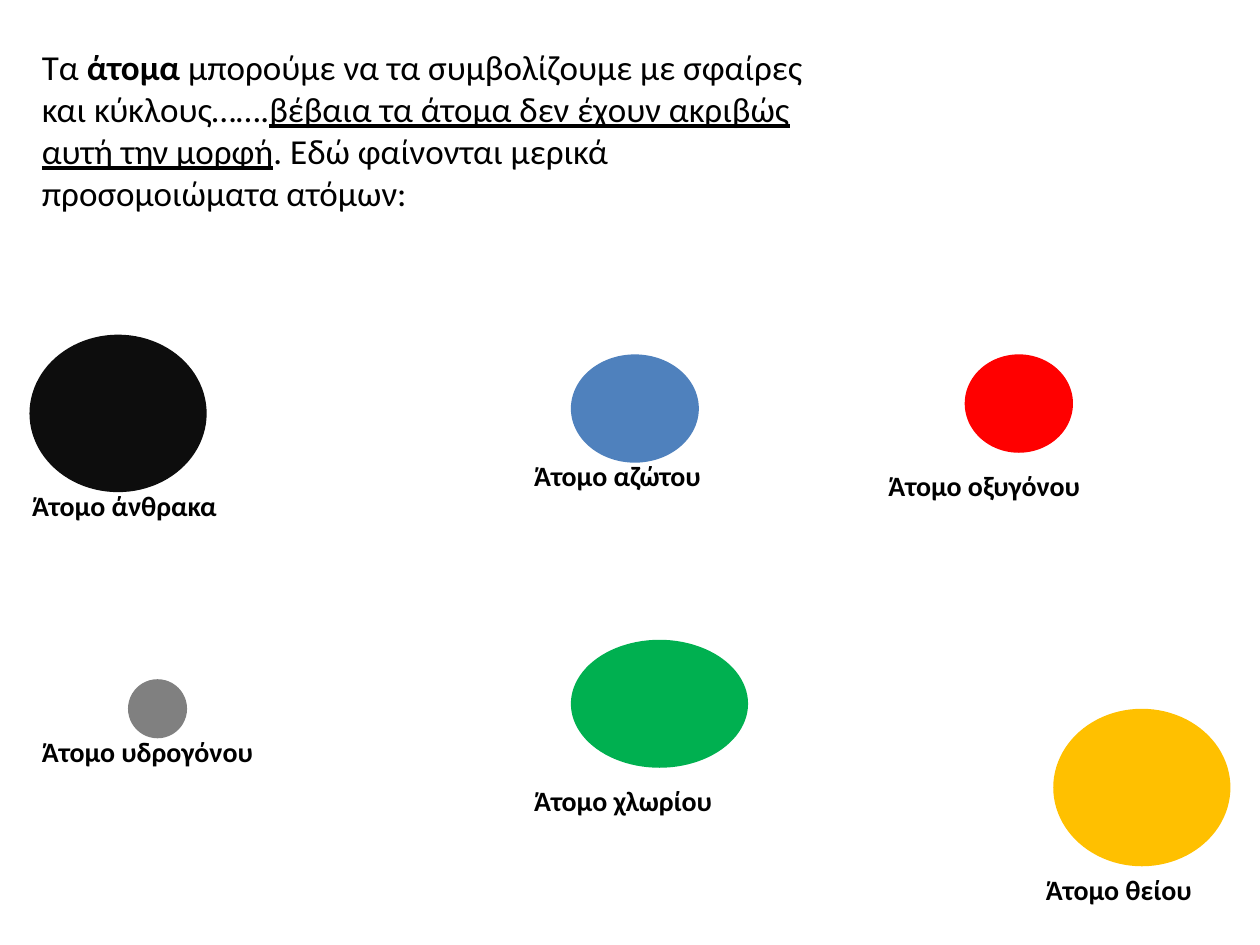
"""Build a slide of coloured spheres that stand for six kinds of atom."""
from typing import NamedTuple

from pptx import Presentation
from pptx.dml.color import RGBColor
from pptx.enum.shapes import MSO_SHAPE as Preset
from pptx.slide import Slide
from pptx.text.text import _Paragraph as Paragraph
from pptx.util import Inches, Pt

WIDTH, HEIGHT = Inches(10), Inches(7.5)
CELL = WIDTH / 128
LABEL_COLUMNS, LABEL_ROWS = 29, 4.75

BLACK = RGBColor(0x00, 0x00, 0x00)
CARBON = RGBColor(0x0D, 0x0D, 0x0D)
HYDROGEN = RGBColor(0x80, 0x80, 0x80)
NITROGEN = RGBColor(0x4F, 0x81, 0xBD)
OXYGEN = RGBColor(0xFF, 0x00, 0x00)
CHLORINE = RGBColor(0x00, 0xB0, 0x50)
SULFUR = RGBColor(0xFF, 0xC0, 0x00)


class Area(NamedTuple):
    """A rectangle in grid columns and rows."""
    column: float
    row: float
    columns: float
    rows: float

    def lengths(self) -> list[int]:
        """Return left, top, width and height as slide lengths."""
        return [round(cells * CELL) for cells in self]


class Span(NamedTuple):
    """A stretch of text in one style."""
    text: str
    bold: bool = False
    underline: bool = False


class Atom(NamedTuple):
    """A sphere and the top left cell of its label."""
    name: str
    color: RGBColor
    sphere: Area
    label_column: float
    label_row: float


INTRO = [
    Span("Τα "),
    Span("άτομα", bold=True),
    Span(" μπορούμε να τα συμβολίζουμε με σφαίρες και κύκλους……."),
    Span("βέβαια τα άτομα δεν έχουν ακριβώς αυτή την μορφή", underline=True),
    Span(". Εδώ φαίνονται μερικά προσομοιώματα ατόμων:"),
]

ATOMS = [
    Atom("άνθρακα", CARBON, Area(3, 34, 18, 16), 2, 49),
    Atom("υδρογόνου", HYDROGEN, Area(13, 69, 6, 6), 3, 74),
    Atom("αζώτου", NITROGEN, Area(58, 36, 13, 11), 53, 46),
    Atom("οξυγόνου", OXYGEN, Area(98, 36, 11, 10), 89, 47),
    Atom("χλωρίου", CHLORINE, Area(58, 65, 18, 13), 53, 79),
    Atom("θείου", SULFUR, Area(107, 72, 18, 16), 105, 88),
]


def add_span(para: Paragraph, span: Span, size: int) -> None:
    """Append one styled run to a paragraph."""
    run = para.add_run()
    run.text = span.text
    run.font.name = "Calibri"
    run.font.size = Pt(size)
    run.font.bold = span.bold
    run.font.underline = span.underline
    run.font.color.rgb = BLACK


def add_text(page: Slide, area: Area, spans: list[Span], size: int) -> None:
    """Add a wrapping text box with one paragraph."""
    box = page.shapes.add_textbox(*area.lengths())
    box.text_frame.word_wrap = True
    for span in spans:
        add_span(box.text_frame.paragraphs[0], span, size)


def add_atom(page: Slide, atom: Atom) -> None:
    """Draw the sphere of an atom and its label."""
    sphere = page.shapes.add_shape(Preset.OVAL, *atom.sphere.lengths())
    sphere.shadow.inherit = False
    sphere.fill.solid()
    sphere.fill.fore_color.rgb = atom.color
    sphere.line.fill.background()
    label = Area(atom.label_column, atom.label_row, LABEL_COLUMNS, LABEL_ROWS)
    add_text(page, label, [Span(f"Άτομο {atom.name}", bold=True)], 16)


def main() -> None:
    """Build and save the deck."""
    deck = Presentation()
    deck.slide_width, deck.slide_height = WIDTH, HEIGHT
    page = deck.slides.add_slide(deck.slide_layouts[6])
    add_text(page, Area(3, 4, 82, 22.75), INTRO, 20)
    for atom in ATOMS:
        add_atom(page, atom)
    deck.save("out.pptx")


if __name__ == "__main__":
    main()
